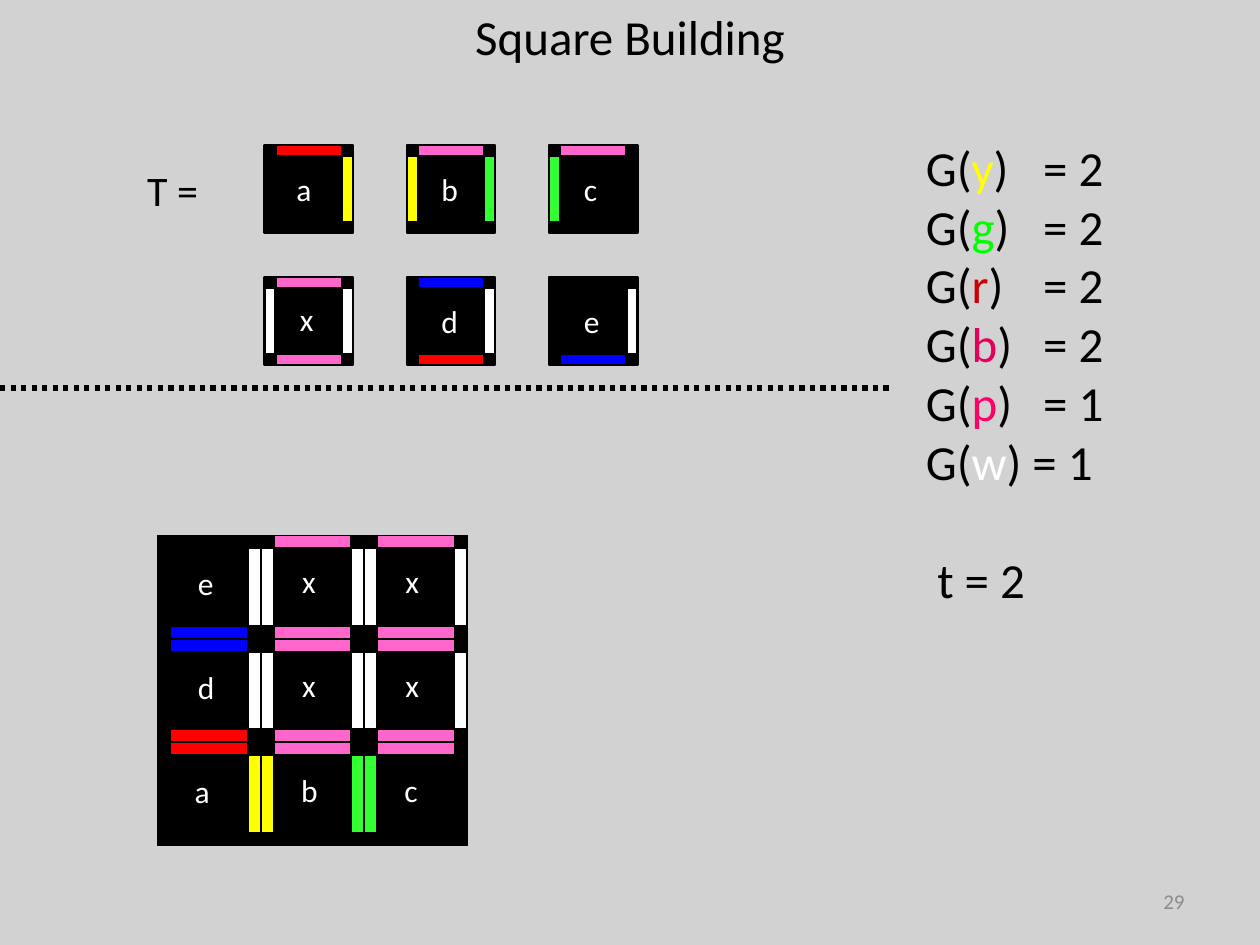
import pptx
import pptx.util
import pptx.dml.color
import pptx.enum.dml
import pptx.enum.shapes
import pptx.enum.text
import pptx.oxml.ns
from lxml import etree

RGB = pptx.dml.color.RGBColor
Inches, Pt = pptx.util.Inches, pptx.util.Pt
ALIGN, ANCHOR = pptx.enum.text.PP_ALIGN, pptx.enum.text.MSO_ANCHOR
qn = pptx.oxml.ns.qn

W, H = 10, 7.5
BACKGROUND = RGB(0xD2, 0xD2, 0xD2)
BLACK = RGB(0, 0, 0)
WHITE = RGB(0xFF, 0xFF, 0xFF)
GREY = RGB(0x8C, 0x8C, 0x8C)
RED = RGB(0xFF, 0, 0)
YELLOW = RGB(0xFF, 0xFF, 0)
GREEN = RGB(0x33, 0xFF, 0x33)
BLUE = RGB(0, 0, 0xFF)
PINK = RGB(0xFF, 0x66, 0xCC)
LIME = RGB(0, 0xFF, 0)
DARK_RED = RGB(0xCC, 0, 0)
CRIMSON = RGB(0xE4, 0, 0x59)
ROSE = RGB(0xFF, 0, 0x66)

# Glue colours of each tile, by side
TILES = {
    "a": {"top": RED, "right": YELLOW},
    "b": {"left": YELLOW, "top": PINK, "right": GREEN},
    "c": {"left": GREEN, "top": PINK},
    "d": {"top": BLUE, "right": WHITE, "bottom": RED},
    "e": {"right": WHITE, "bottom": BLUE},
    "x": {"left": WHITE, "top": PINK, "bottom": PINK, "right": WHITE},
}
# Bars and letters as shares of the tile: left, top, width, height
EDGE = 0.125
SIDES = {
    "left": (0, EDGE, EDGE, 1 - 2 * EDGE),
    "top": (EDGE, 0, 1 - 2 * EDGE, EDGE),
    "right": (1 - EDGE, EDGE, EDGE, 1 - 2 * EDGE),
    "bottom": (EDGE, 1 - EDGE, 1 - 2 * EDGE, EDGE),
}
LETTER_AT = {"a": (0.36, 0.29), "x": (0.4, 0.26)}
GLUES = [("y", YELLOW, 2), ("g", LIME, 2), ("r", DARK_RED, 2),
         ("b", CRIMSON, 2), ("p", ROSE, 1), ("w", WHITE, 1)]


def add_run(p, text, size, color):
    r = p.add_run()
    r.text = text
    r.font.name = "Calibri"
    r.font.size = Pt(size)
    r.font.color.rgb = color


def add_text(shapes, box, text="", size=18, color=BLACK, align=ALIGN.LEFT,
             anchor=ANCHOR.TOP, inset=True):
    tf = shapes.add_textbox(*map(Inches, box)).text_frame
    tf.word_wrap = True
    tf.vertical_anchor = anchor
    if not inset:
        tf.margin_left = tf.margin_top = tf.margin_right = tf.margin_bottom = 0
    p = tf.paragraphs[0]
    p.alignment = align
    if text:
        add_run(p, text, size, color)
    return tf


def add_rect(shapes, box, fill, line_width):
    sp = shapes.add_shape(pptx.enum.shapes.MSO_SHAPE.RECTANGLE, *map(Inches, box))
    sp.shadow.inherit = False
    sp.fill.solid()
    sp.fill.fore_color.rgb = fill
    sp.line.color.rgb = BLACK
    sp.line.width = Pt(line_width)


def add_tile(shapes, name, box, line_width):
    x, y, w, h = box
    add_rect(shapes, box, BLACK, line_width)
    for side, color in TILES[name].items():
        dx, dy, dw, dh = SIDES[side]
        add_rect(shapes, (x + dx * w, y + dy * h, dw * w, dh * h), color, line_width)
    dx, dy = LETTER_AT.get(name, (0.39, 0.28))
    add_text(shapes, (x + dx * w, y + dy * h, 0.3 * w, 0.4 * h), name,
             color=WHITE, inset=False)


def add_tile_grid(s, rows, left, top, size, pitch, line_width):
    shapes = s.shapes.add_group_shape().shapes
    for row, names in enumerate(rows):
        for col, name in enumerate(names):
            box = (left + col * pitch[0], top + row * pitch[1], size, size)
            add_tile(shapes, name, box, line_width)


def add_glue_list(s, box):
    tf = add_text(s.shapes, box)
    for i, (glue, color, strength) in enumerate(GLUES):
        p = tf.paragraphs[0] if i == 0 else tf.add_paragraph()
        gap = " " if glue == "w" else "\t"
        for text, c in (("G(", BLACK), (glue, color), (f"){gap}= {strength}", BLACK)):
            add_run(p, text, 28, c)
        # Tab stop that lines up the equals signs
        tabs = etree.SubElement(p._p.get_or_add_pPr(), qn("a:tabLst"))
        etree.SubElement(tabs, qn("a:tab"), pos=str(Inches(0.93)), algn="l")
    # Temperature, one line further down
    p = tf.add_paragraph()
    p.space_before = Pt(34)
    p._p.get_or_add_pPr().set("marL", str(Inches(0.09)))
    add_run(p, "t = 2", 28, BLACK)


def add_divider(s, y, width):
    cx = s.shapes.add_connector(pptx.enum.shapes.MSO_CONNECTOR.STRAIGHT,
                                0, Inches(y), Inches(width), Inches(y))
    cx.line.color.rgb = BLACK
    cx.line.width = Pt(3)
    cx.line.dash_style = pptx.enum.dml.MSO_LINE.ROUND_DOT
    etree.SubElement(cx._element.spPr, qn("a:effectLst"))


def main():
    prs = pptx.Presentation()
    prs.slide_width, prs.slide_height = Inches(W), Inches(H)
    s = prs.slides.add_slide(prs.slide_layouts[6])
    s.background.fill.solid()
    s.background.fill.fore_color.rgb = BACKGROUND

    # Slide number, tile set label and glue strengths
    add_text(s.shapes, (7.17, 6.95, 2.33, 0.4), "29", size=12, color=GREY,
             align=ALIGN.RIGHT, anchor=ANCHOR.MIDDLE)
    add_text(s.shapes, (1.07, 1.26, 0.88, 0.5), "T =", size=24)
    add_glue_list(s, (7.25, 1.04, 2.08, 3.84))

    # Tile set above the divider, assembled square below
    add_tile_grid(s, ["abc", "xde"], 2.1, 1.15, 0.7, (1.13, 1.05), 1.25)
    add_tile_grid(s, ["exx", "dxx", "abc"], 1.25, 4.25, 0.82, (0.82, 0.82), 1)
    add_divider(s, 3.08, 7.08)

    # Title
    add_text(s.shapes, (0, 0, W, 1.04), "Square Building", size=28, align=ALIGN.CENTER)
    prs.save("out.pptx")


if __name__ == "__main__":
    main()
